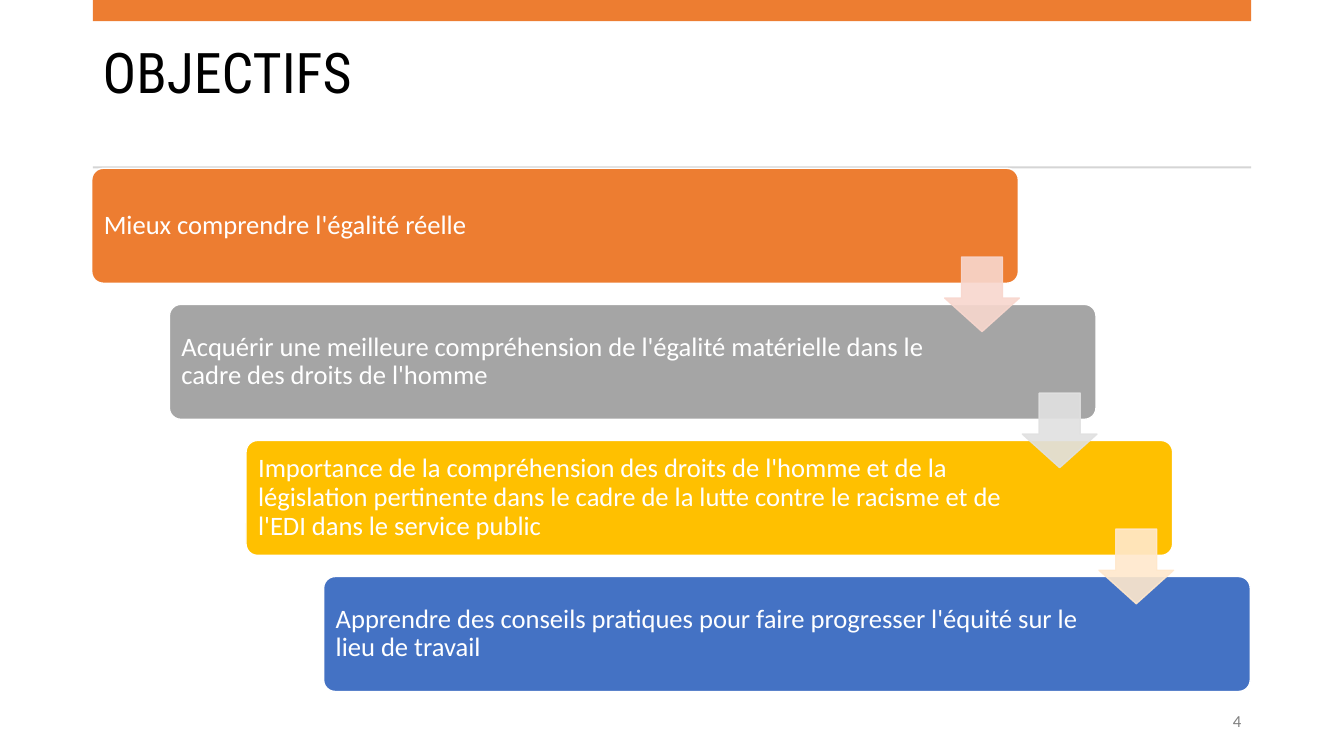
from lxml import etree
from pptx import Presentation
from pptx import util as u
from pptx.dml.color import RGBColor
from pptx.enum import shapes, text
from pptx.oxml.ns import qn

TITLE = "OBJECTIFS"
PAGE = "4"
# text, box colour, text width, colour of the arrow to the next step
STEPS = [
    ("Mieux comprendre l'égalité réelle", "ED7D31", 787, "F8D7CE"),
    ("Acquérir une meilleure compréhension de l'égalité matérielle dans le "
     "cadre des droits de l'homme", "A5A5A5", 762, "E1E1E1"),
    ("Importance de la compréhension des droits de l'homme et de la "
     "législation pertinente dans le cadre de la lutte contre le racisme et "
     "de l'EDI dans le service public", "FFC000", 762, "FFE8CC"),
    ("Apprendre des conseils pratiques pour faire progresser l'équité sur le "
     "lieu de travail", "4472C4", 762, None),
]

LEFT, WIDTH = 92, 1149
BOX_X, BOX_Y, BOX_W, BOX_H = 91, 167, 919, 114
ARROW_X, ARROW_Y, ARROW = 937, 255, 74
STAIR_W, STEP_Y = 230, 135
PAD = 4


def px(n):
    return u.Emu(n * 9144)


def rgb(color):
    return RGBColor.from_string(color)


def add_shape(kind, x, y, w, h, fill, line=None, adj=(), alpha=None):
    sp = slide.shapes.add_shape(kind, px(x), px(y), px(w), px(h))
    sp.shadow.inherit = False
    for i, value in enumerate(adj):
        sp.adjustments[i] = value
    sp.fill.solid()
    sp.fill.fore_color.rgb = rgb(fill)
    if line:
        sp.line.color.rgb = rgb(line)
        sp.line.width = u.Pt(1)
    else:
        sp.line.fill.background()
    if alpha:
        for color in sp._element.spPr.iter(qn("a:srgbClr")):
            etree.SubElement(color, qn("a:alpha"), val=str(alpha * 1000))


def add_text(content, x, y, w, h, size, color, font="Calibri", inset=None,
             align=text.PP_ALIGN.LEFT, spacing=None, after=0):
    tf = slide.shapes.add_textbox(px(x), px(y), px(w), px(h)).text_frame
    tf.word_wrap = True
    tf.vertical_anchor = text.MSO_ANCHOR.MIDDLE
    if inset is not None:
        tf.margin_left = tf.margin_right = px(inset)
        tf.margin_top = tf.margin_bottom = px(inset)
    p = tf.paragraphs[0]
    p.alignment = align
    p.line_spacing = spacing
    p.space_after = u.Pt(after)
    r = p.add_run()
    r.text = content
    r.font.name = font
    r.font.size = u.Pt(size)
    r.font.color.rgb = rgb(color)


prs = Presentation()
prs.slide_width, prs.slide_height = px(1333), px(750)
slide = prs.slides.add_slide(prs.slide_layouts[6])
KIND = shapes.MSO_SHAPE

add_text(TITLE, LEFT, 37, WIDTH, 76, 40, "000000", font="Roboto Condensed",
         spacing=0.9)
add_shape(KIND.RECTANGLE, LEFT, 0, WIDTH, 21, "ED7D31")
add_shape(KIND.RECTANGLE, LEFT, 165, WIDTH, 2, "D5D5D5")
add_text(PAGE, 953, 695, 288, 40, 12, "808080",
         align=text.PP_ALIGN.RIGHT, after=6)

offsets = [(round(i * STAIR_W / (len(STEPS) - 1)), i * STEP_Y)
           for i in range(len(STEPS))]
for (dx, dy), (label, fill, text_w, _) in zip(offsets, STEPS):
    x, y = BOX_X + dx, BOX_Y + dy
    add_shape(KIND.ROUNDED_RECTANGLE, x, y, BOX_W, BOX_H, fill,
              line="FFFFFF", adj=(0.1,))
    add_text(label, x + PAD, y + PAD, text_w, BOX_H - 2 * PAD, 19, "FFFFFF",
             inset=8, spacing=0.9)
for (dx, dy), (*_, tint) in zip(offsets, STEPS):
    if tint:
        add_shape(KIND.DOWN_ARROW, ARROW_X + dx, ARROW_Y + dy, ARROW, ARROW,
                  tint, line=tint, adj=(0.55, 0.45), alpha=90)

prs.save("out.pptx")
